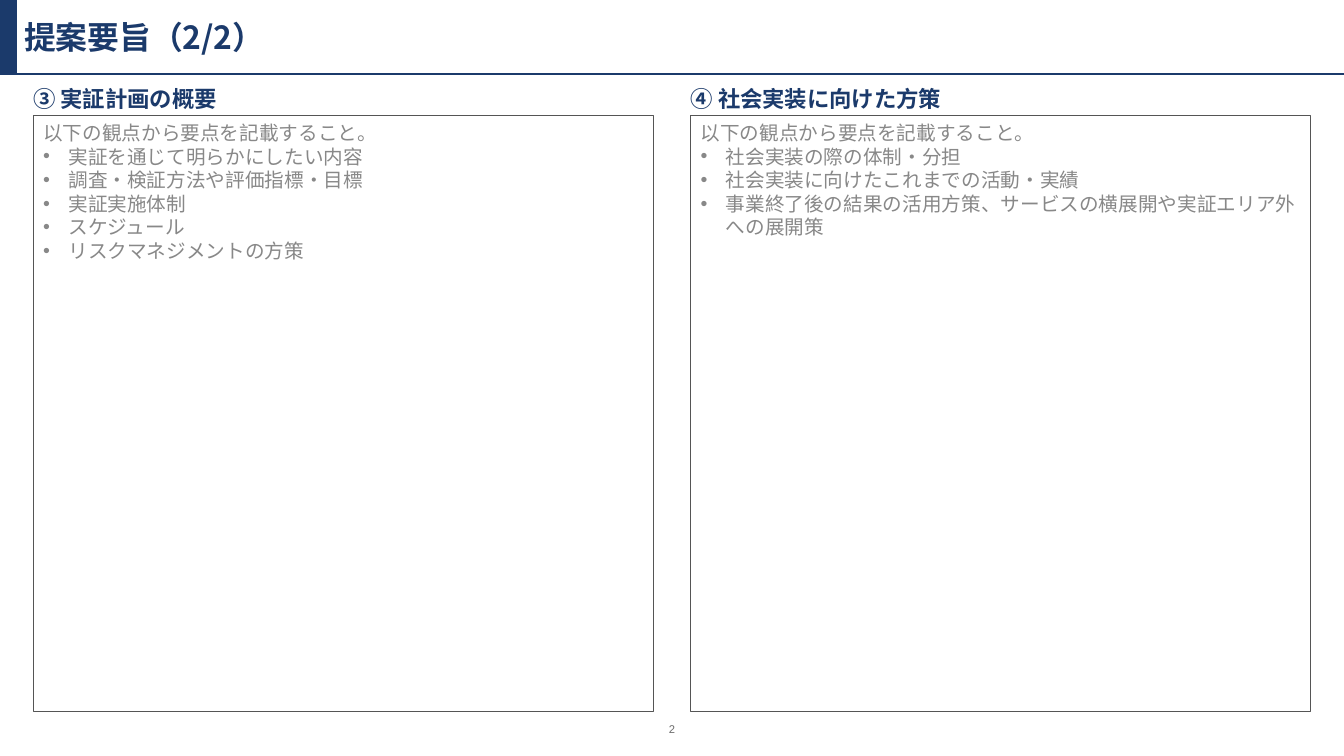
from dataclasses import dataclass
from lxml.etree import SubElement as Sub
from pptx import Presentation
from pptx.dml.color import RGBColor as RGB
from pptx.enum.shapes import MSO_CONNECTOR as Conn, MSO_SHAPE as Shape
from pptx.enum.text import MSO_ANCHOR as Anchor, PP_ALIGN as Align
from pptx.oxml.ns import qn
from pptx.util import Inches, Pt


@dataclass(frozen=True)
class Theme:
    navy: RGB = RGB(0x1B, 0x3A, 0x6B)
    white: RGB = RGB(0xFF, 0xFF, 0xFF)
    edge: RGB = RGB(0x55, 0x55, 0x55)
    hint: RGB = RGB(0x88, 0x88, 0x88)
    page: RGB = RGB(0x6B, 0x6B, 0x6B)
    font: str = "Noto Sans CJK JP"
    digit: str = "Arial"
    title: float = 22.7
    head: float = 16
    body: float = 14
    small: float = 8


THEME = Theme()
LEAD = "以下の観点から要点を記載すること。"
PANELS = [
    ("③ 実証計画の概要", [
        "実証を通じて明らかにしたい内容",
        "調査・検証方法や評価指標・目標",
        "実証実施体制",
        "スケジュール",
        "リスクマネジメントの方策",
    ]),
    ("④ 社会実装に向けた方策", [
        "社会実装の際の体制・分担",
        "社会実装に向けたこれまでの活動・実績",
        "事業終了後の結果の活用方策、サービスの横展開や実証エリア外への展開策",
    ]),
]


def style(para, size, color, bold=False, face=THEME.font):
    font = para.font
    font.size, font.bold, font.name = Pt(size), bold, face
    font.color.rgb = color
    props = para._p.get_or_add_pPr().find(qn("a:defRPr"))
    Sub(props, qn("a:ea")).set("typeface", face)


def bullet(para):
    props = para._p.get_or_add_pPr()
    props.set("marL", str(Inches(0.25)))
    props.set("indent", str(-Inches(0.25)))
    Sub(props, qn("a:buFont")).set("typeface", THEME.digit)
    Sub(props, qn("a:buChar")).set("char", "•")


def label(slide, box, text, size, color, **look):
    frame = slide.shapes.add_textbox(*map(Inches, box)).text_frame
    frame.word_wrap = True
    frame.vertical_anchor = Anchor.MIDDLE
    frame.margin_left = frame.margin_right = 0
    frame.margin_top = frame.margin_bottom = 0
    para = frame.paragraphs[0]
    para.text = text
    style(para, size, color, **look)
    return para


def block(slide, box, fill, line, width):
    rect = slide.shapes.add_shape(Shape.RECTANGLE, *map(Inches, box))
    rect.shadow.inherit = False
    rect.fill.solid()
    rect.fill.fore_color.rgb = fill
    rect.line.color.rgb = line
    rect.line.width = Pt(width)
    return rect


def header(slide, box, text):
    left, top, width, height = box
    block(slide, (left, top, 0.16, height), THEME.navy, THEME.navy, 1)
    label(slide, (left + 0.24, top + 0.04, width - 0.66, height - 0.09),
          text, THEME.title, THEME.navy, bold=True)
    base = Inches(top + height)
    rule = slide.shapes.add_connector(
        Conn.STRAIGHT, Inches(left), base, Inches(left + width), base)
    rule.line.color.rgb = THEME.navy
    rule.line.width = Pt(1.5)
    Sub(rule._element.spPr, qn("a:effectLst"))


def panel(slide, box, head, items):
    left, top, width, height = box
    label(slide, (left, top, width, 0.29), head,
          THEME.head, THEME.navy, bold=True)
    rect = block(slide, (left, top + 0.32, width, height - 0.32),
                 THEME.white, THEME.edge, 0.75)
    frame = rect.text_frame
    frame.word_wrap = True
    frame.vertical_anchor = Anchor.TOP
    for num, text in enumerate([LEAD, *items]):
        para = frame.add_paragraph() if num else frame.paragraphs[0]
        para.text = text
        para.alignment = Align.LEFT
        if num:
            bullet(para)
        style(para, THEME.body, THEME.hint)


def footer(slide, box, text):
    para = label(slide, box, text, THEME.small, THEME.page, face=THEME.digit)
    para.alignment = Align.CENTER


def main():
    deck = Presentation()
    deck.slide_width, deck.slide_height = Inches(13.33), Inches(7.5)
    slide = deck.slides.add_slide(deck.slide_layouts[6])
    header(slide, (0, 0, 13.33, 0.73), "提案要旨（2/2）")
    for col, (head, items) in enumerate(PANELS):
        panel(slide, (0.33 + col * 6.52, 0.83, 6.15, 6.23), head, items)
    footer(slide, (6.5, 7.18, 0.33, 0.1), "2")
    deck.save("out.pptx")


if __name__ == "__main__":
    main()
